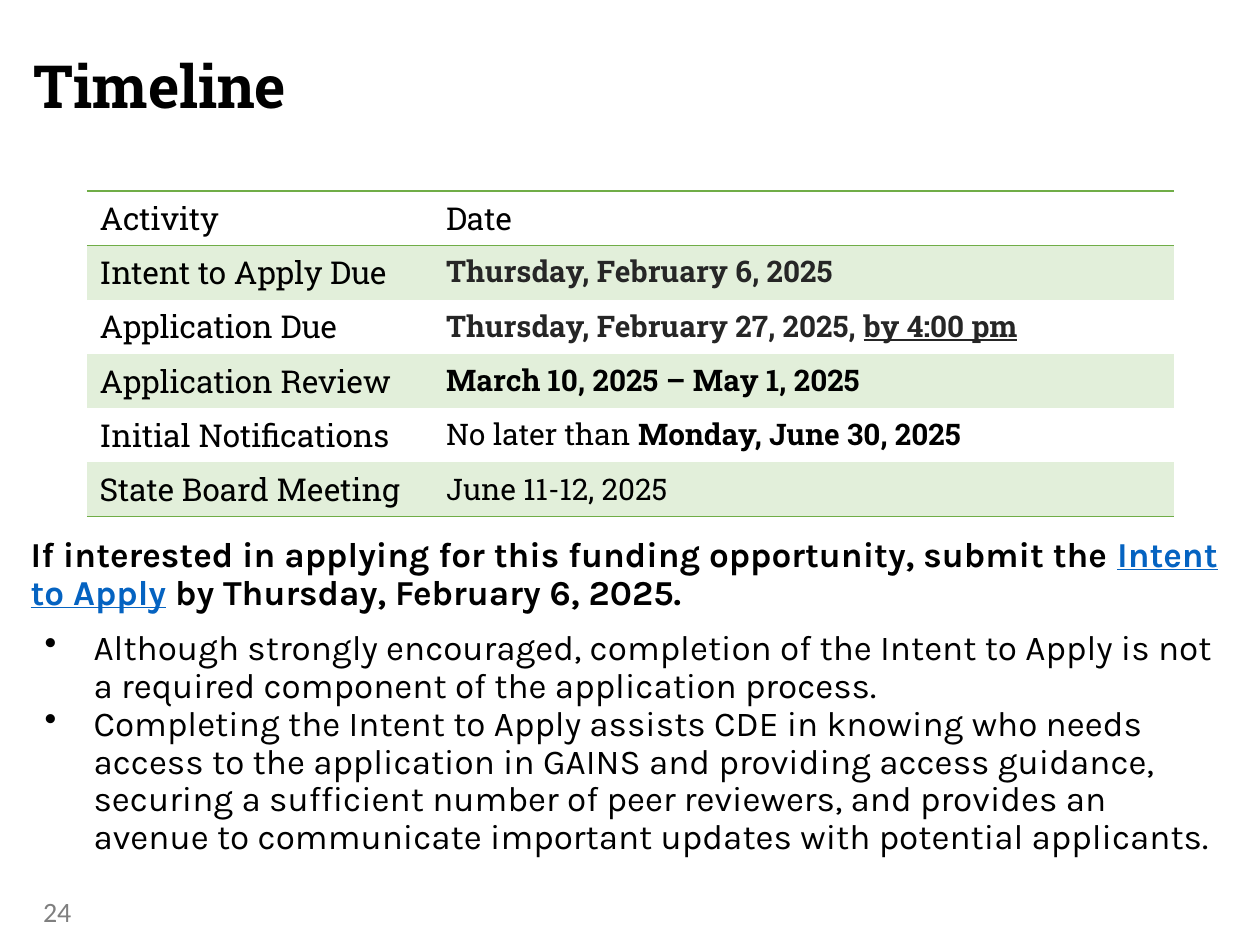
import dataclasses

import pptx
import pptx.dml.color
import pptx.enum.text
import pptx.oxml
import pptx.oxml.ns
import pptx.util
from lxml import etree

Pt = pptx.util.Pt
RGBColor = pptx.dml.color.RGBColor
Anchor = pptx.enum.text.MSO_ANCHOR
qn = pptx.oxml.ns.qn


@dataclasses.dataclass(frozen=True)
class Theme:
    heading_font: str = "Roboto Slab"
    body_font: str = "Karla"
    number_font: str = "Calibri"
    black: str = "000000"
    dark: str = "262626"
    link: str = "0563C1"
    gray: str = "7F7F7F"
    green: str = "70AD47"
    band: str = "E2EFDA"
    title_size: int = 34
    body_size: int = 20
    activity_size: int = 18
    date_size: int = 17
    number_size: int = 16
    plain_table: str = "{2D5ABB26-0587-4C30-8999-92F81FD0307C}"


class SlideBuilder:
    """Hold the theme and the current slide, and add styled elements to it."""

    def __init__(self, presentation, theme):
        self.theme = theme
        self.slide = presentation.slides.add_slide(presentation.slide_layouts[5])

    def format_run(self, run, font, size, color, bold=False, underline=False):
        run.font.name = font
        run.font.size = Pt(size)
        run.font.color.rgb = RGBColor.from_string(color)
        run.font.bold = bold
        run.font.underline = underline

    def fill_paragraph(self, paragraph, pieces, font, size):
        for text, color, bold, underline in pieces:
            run = paragraph.add_run()
            run.text = text
            self.format_run(run, font, size, color, bold, underline)

    def prepare_frame(self, text_frame, margins, anchor):
        text_frame.word_wrap = True
        text_frame.auto_size = pptx.enum.text.MSO_AUTO_SIZE.NONE
        text_frame.vertical_anchor = anchor
        text_frame.margin_left = text_frame.margin_right = Pt(margins[0])
        text_frame.margin_top = text_frame.margin_bottom = Pt(margins[1])

    def title(self, text, left, top, width, height):
        shape = self.slide.shapes.title
        shape.left, shape.top, shape.width, shape.height = map(Pt, (left, top, width, height))
        self.prepare_frame(shape.text_frame, (0, 0), Anchor.TOP)
        shape.text_frame.text = text
        paragraph = shape.text_frame.paragraphs[0]
        paragraph.alignment = pptx.enum.text.PP_ALIGN.LEFT
        paragraph.line_spacing = 0.9
        theme = self.theme
        self.format_run(paragraph.runs[0], theme.heading_font, theme.title_size, theme.black, True)

    def border(self, cell, side):
        line = etree.SubElement(cell._tc.get_or_add_tcPr(), qn(f"a:{side}"), w=str(Pt(1)))
        fill = etree.SubElement(line, qn("a:solidFill"))
        etree.SubElement(fill, qn("a:srgbClr"), val=self.theme.green)

    def table(self, rows, left, top, column_widths, row_height):
        theme = self.theme
        frame = self.slide.shapes.add_table(
            len(rows), len(column_widths), Pt(left), Pt(top),
            Pt(sum(column_widths)), Pt(row_height * len(rows)))
        table = frame.table
        table.first_row = table.horz_banding = False
        next(frame.element.iter(qn("a:tableStyleId"))).text = theme.plain_table
        for column, width in zip(table.columns, column_widths):
            column.width = Pt(width)
        for row_index, (activity, date) in enumerate(rows):
            table.rows[row_index].height = Pt(row_height)
            activity_pieces = [(activity, theme.black, False, False)]
            date_size = theme.date_size if row_index else theme.activity_size
            contents = ((activity_pieces, theme.activity_size), (date, date_size))
            for column_index, (pieces, size) in enumerate(contents):
                cell = table.cell(row_index, column_index)
                paragraph = cell.text_frame.paragraphs[0]
                self.fill_paragraph(paragraph, pieces, theme.heading_font, size)
                if row_index == 0:
                    self.border(cell, "lnT")
                if row_index in (0, len(rows) - 1):
                    self.border(cell, "lnB")
                if row_index % 2:
                    cell.fill.solid()
                    cell.fill.fore_color.rgb = RGBColor.from_string(theme.band)
                else:
                    cell.fill.background()

    def bullet(self, paragraph):
        properties = paragraph._p.get_or_add_pPr()
        properties.set("marL", str(Pt(36)))
        properties.set("indent", str(Pt(-28)))
        etree.SubElement(properties, qn("a:buChar"), char="•")

    def body(self, lead, bullets, left, top, width, height):
        theme = self.theme
        shape = self.slide.shapes.add_textbox(Pt(left), Pt(top), Pt(width), Pt(height))
        text_frame = shape.text_frame
        self.prepare_frame(text_frame, (0, 0), Anchor.TOP)
        paragraph = text_frame.paragraphs[0]
        paragraph.line_spacing = 0.9
        self.fill_paragraph(paragraph, lead, theme.body_font, theme.body_size)
        for index, text in enumerate(bullets):
            paragraph = text_frame.add_paragraph()
            paragraph.text = text
            paragraph.line_spacing = 0.9
            paragraph.space_before = Pt(0 if index else 10)
            self.bullet(paragraph)
            self.format_run(paragraph.runs[0], theme.body_font, theme.body_size, theme.black)

    def page_number(self, text, left, top, width, height):
        theme = self.theme
        shape = self.slide.shapes.add_textbox(Pt(left), Pt(top), Pt(width), Pt(height))
        self.prepare_frame(shape.text_frame, (7.2, 3.6), Anchor.MIDDLE)
        shape.text_frame.text = text
        run = shape.text_frame.paragraphs[0].runs[0]
        self.format_run(run, theme.number_font, theme.number_size, theme.gray)


def main():
    theme = Theme()
    black, dark = theme.black, theme.dark
    presentation = pptx.Presentation()
    presentation.slide_width, presentation.slide_height = Pt(720), Pt(540)
    builder = SlideBuilder(presentation, theme)
    builder.title("Timeline", 19.4, 32.4, 478.8, 59.8)
    timeline = [
        ("Activity", [("Date", black, False, False)]),
        ("Intent to Apply Due", [("Thursday, February 6, 2025", dark, True, False)]),
        ("Application Due", [("Thursday, February 27, 2025, ", dark, True, False),
                             ("by 4:00 pm", dark, True, True)]),
        ("Application Review", [("March 10, 2025 – May 1, 2025", black, True, False)]),
        ("Initial Notifications", [("No later than ", black, False, False),
                                   ("Monday, June 30, 2025", black, True, False)]),
        ("State Board Meeting", [("June 11-12, 2025", black, False, False)]),
    ]
    builder.table(timeline, 49.7, 109.2, (198, 423), 29.2)
    lead = [
        ("If interested in applying for this funding opportunity, submit the ", black, True, False),
        ("Intent to Apply", theme.link, True, True),
        (" by Thursday, February 6, 2025.", black, True, False),
    ]
    bullets = [
        "Although strongly encouraged, completion of the Intent to Apply is not a required "
        "component of the application process.",
        "Completing the Intent to Apply assists CDE in knowing who needs access to the "
        "application in GAINS and providing access guidance, securing a sufficient number of "
        "peer reviewers, and provides an avenue to communicate important updates with "
        "potential applicants.",
    ]
    builder.body(lead, bullets, 17.5, 307, 680.4, 182)
    builder.page_number("24", 17.5, 506.2, 162, 28.8)
    presentation.save("out.pptx")


if __name__ == "__main__":
    main()
